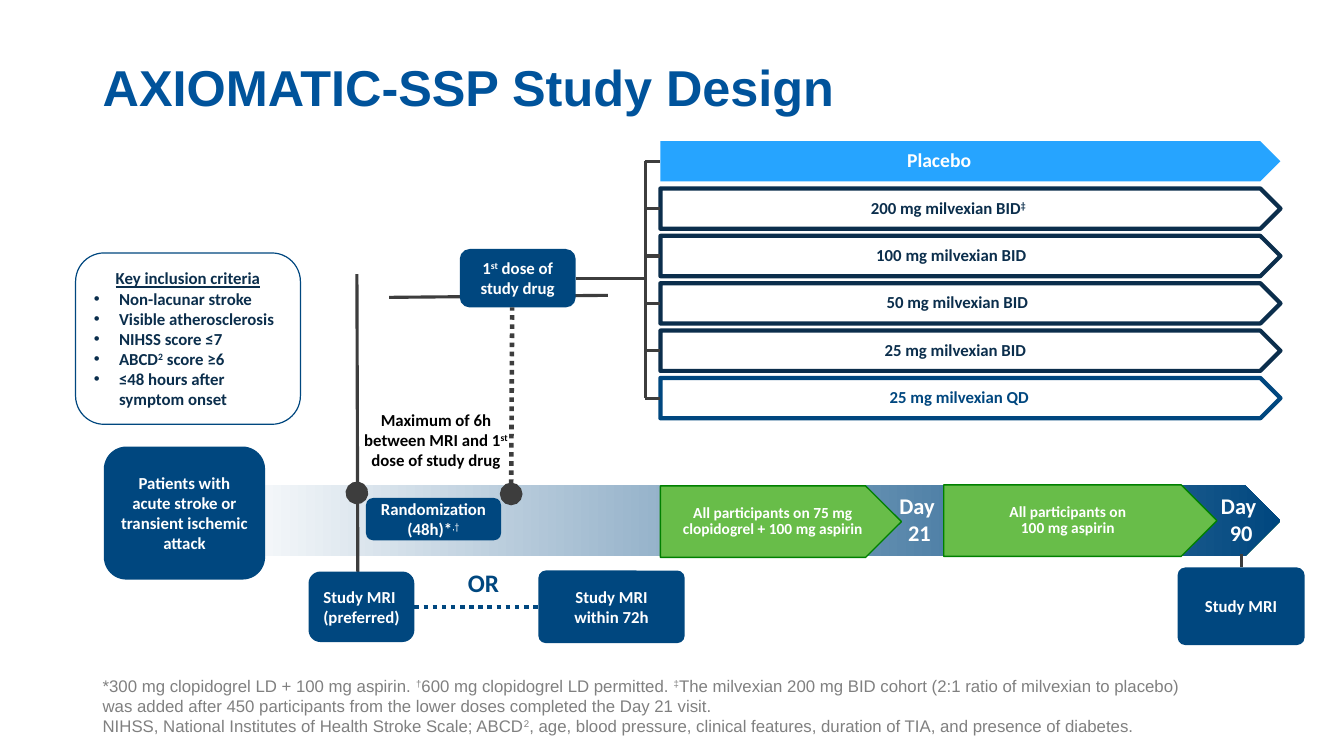
from dataclasses import dataclass

from lxml import etree
from pptx import Presentation
from pptx.dml.color import RGBColor
from pptx.enum.dml import MSO_LINE
from pptx.enum.shapes import MSO_CONNECTOR, MSO_SHAPE
from pptx.enum.text import MSO_ANCHOR, PP_ALIGN
from pptx.oxml.ns import qn
from pptx.shapes.autoshape import Shape
from pptx.shapes.connector import Connector
from pptx.util import Pt

SCALE = 9144  # EMU in one px, 100 px to the inch
ARROW, ROUNDED = MSO_SHAPE.PENTAGON, MSO_SHAPE.ROUNDED_RECTANGLE
STRAIGHT, DOTTED = MSO_CONNECTOR.STRAIGHT, MSO_LINE.ROUND_DOT
LEFT, CENTER = PP_ALIGN.LEFT, PP_ALIGN.CENTER
TOP, MIDDLE, BOTTOM = MSO_ANCHOR.TOP, MSO_ANCHOR.MIDDLE, MSO_ANCHOR.BOTTOM
SITE_TOP, SITE_LEFT, SITE_RIGHT = 0, 1, 3

WHITE = RGBColor(0xFF, 0xFF, 0xFF)
BLACK = RGBColor(0x00, 0x00, 0x00)
GRAY = RGBColor(0x80, 0x80, 0x80)
CHARCOAL = RGBColor(0x3D, 0x3D, 0x3D)
NAVY = RGBColor(0x0B, 0x2E, 0x4C)
BLUE = RGBColor(0x00, 0x47, 0x7F)
TITLE_BLUE = RGBColor(0x00, 0x53, 0x9B)
SKY = RGBColor(0x26, 0xA4, 0xFF)
GREEN = RGBColor(0x68, 0xBD, 0x49)
DARK_GREEN = RGBColor(0x00, 0x80, 0x00)


@dataclass(frozen=True)
class Area:
    left: int
    top: int
    width: int
    height: int

    def emu(self) -> list[int]:
        return [v * SCALE for v in (self.left, self.top, self.width, self.height)]


@dataclass(frozen=True)
class Arm:
    label: str
    text_center: int
    color: RGBColor = NAVY
    fill: RGBColor | None = None
    size: int = 12


@dataclass(frozen=True)
class Step:
    label: str
    area: Area
    inset: int
    corner: float = 0.17


@dataclass(frozen=True)
class Background:
    label: str
    area: Area
    insets: tuple[int, int]


@dataclass(frozen=True)
class Caption:
    text: str
    area: Area
    size: int
    color: RGBColor
    font: str = "Calibri"
    bold: bool = True
    align: PP_ALIGN = CENTER
    anchor: MSO_ANCHOR = TOP
    inset: int = 10
    spacing: float = 1.0


ARMS = [
    Arm("Placebo", 931, WHITE, SKY, 14),
    Arm("200 mg milvexian BID^‡", 940),
    Arm("100 mg milvexian BID", 943),
    Arm("50 mg milvexian BID", 949),
    Arm("25 mg milvexian BID", 947),
    Arm("25 mg milvexian QD", 951, BLUE),
]
ARM_LEFT, ARM_TOP, ARM_WIDTH, ARM_HEIGHT, ARM_PITCH = 655, 140, 615, 40, 47
BRACKET_X = 640

PATIENTS = Step("Patients with acute stroke or transient ischemic attack", Area(103, 443, 160, 132), 10)
RANDOMIZATION = Step("Randomization (48h)*^,†", Area(363, 494, 134, 42), 10)
FIRST_DOSE = Step("1^st^ dose of study drug", Area(456, 247, 115, 58), 14)
MRI_PREFERRED = Step("Study MRI \n(preferred)", Area(306, 567, 105, 70), 5)
MRI_72H = Step("Study MRI within 72h", Area(534, 566, 145, 72), 20, 0.1)
MRI_FINAL = Step("Study MRI", Area(1168, 563, 126, 77), 14, 0.1)

BACKGROUNDS = [
    Background("All participants on 75 mg clopidogrel + 100 mg aspirin", Area(655, 482, 239, 71), (10, 8)),
    Background("All participants on 100 mg aspirin", Area(936, 481, 271, 71), (60, 67)),
]
CRITERIA = ("Key inclusion criteria\nNon-lacunar stroke\nVisible atherosclerosis\nNIHSS score ≤7\n"
            "ABCD^2^ score ≥6\n≤48 hours after symptom onset")
FOOTNOTE = ("*300 mg clopidogrel LD + 100 mg aspirin. ^†^600 mg clopidogrel LD permitted. ^‡^The milvexian "
            "200 mg BID cohort (2:1 ratio of milvexian to placebo) was added after 450 participants from the "
            "lower doses completed the Day 21 visit.\nNIHSS, National Institutes of Health Stroke Scale; "
            "ABCD^2^, age, blood pressure, clinical features, duration of TIA, and presence of diabetes.")
CAPTIONS = [
    Caption("Day \n21", Area(865, 483, 94, 64), 16, WHITE),
    Caption("Day \n90", Area(1184, 483, 94, 64), 16, WHITE),
    Caption("OR", Area(441, 558, 77, 40), 18, BLUE),
    Caption("Maximum of 6h between MRI and 1^st^ dose of study drug", Area(336, 409, 193, 55), 12, BLACK,
            anchor=MIDDLE, inset=15),
    Caption("AXIOMATIC-SSP Study Design", Area(92, 0, 1150, 121), 36, TITLE_BLUE, "Arial",
            align=LEFT, anchor=BOTTOM, spacing=0.9),
    Caption(FOOTNOTE, Area(92, 667, 1116, 68), 12, GRAY, "Arial", False, LEFT, BOTTOM),
]


def write(box: Shape, text: str, *, size: int, color: RGBColor, font: str = "Calibri", bold: bool = True,
          align: PP_ALIGN = CENTER, anchor: MSO_ANCHOR = MIDDLE, insets: tuple[int, int] = (10, 10),
          margin: int = 0, spacing: float = 1.0) -> None:
    """Fill a box; a line break starts a paragraph and ^ toggles superscript."""
    frame = box.text_frame
    frame.word_wrap = True
    frame.vertical_anchor = anchor
    frame.margin_left, frame.margin_right = (v * SCALE for v in insets)
    frame.margin_top = frame.margin_bottom = margin * SCALE
    for row, line in enumerate(text.split("\n")):
        para = frame.add_paragraph() if row else frame.paragraphs[0]
        para.alignment = align
        para.line_spacing = spacing
        for part, words in enumerate(line.split("^")):
            if not words:
                continue
            span = para.add_run()
            span.text = words
            span.font.size, span.font.name, span.font.bold = Pt(size), font, bold
            span.font.color.rgb = color
            if part % 2:
                span.font._element.set("baseline", "30000")


def add_box(page, kind: MSO_SHAPE, area: Area, *, fill: RGBColor | None = None,
            outline: RGBColor | None = None, weight: float = 1) -> Shape:
    box = page.shapes.add_shape(kind, *area.emu())
    box.shadow.inherit = False
    if fill is None:
        box.fill.background()
    else:
        box.fill.solid()
        box.fill.fore_color.rgb = fill
    if outline is None:
        box.line.fill.background()
    else:
        box.line.color.rgb = outline
        box.line.width = Pt(weight)
    return box


def add_step(page, step: Step) -> Shape:
    box = add_box(page, ROUNDED, step.area, fill=BLUE)
    box.adjustments[0] = step.corner
    write(box, step.label, size=12, color=WHITE, insets=(step.inset, step.inset))
    return box


def add_line(page, start: tuple[int, int], end: tuple[int, int], *, color: RGBColor = CHARCOAL,
             dotted: bool = False, oval: bool = False) -> Connector:
    line = page.shapes.add_connector(STRAIGHT, *(v * SCALE for v in start + end))
    line.line.color.rgb = color
    line.line.width = Pt(3.25 if dotted else 2.25)
    if dotted:
        line.line.dash_style = DOTTED
    properties = line._element.spPr
    if oval:
        etree.SubElement(properties.find(qn("a:ln")), qn("a:headEnd"), type="oval", w="lg", len="lg")
    etree.SubElement(properties, qn("a:effectLst"))
    return line


def add_criteria(page) -> None:
    box = add_box(page, ROUNDED, Area(75, 251, 223, 170), outline=BLUE, weight=0.85)
    write(box, CRITERIA, size=12, color=NAVY, align=LEFT)
    heading, *items = box.text_frame.paragraphs
    heading.alignment = CENTER
    heading.runs[0].font.underline = True
    for para in items:
        properties = para._p.get_or_add_pPr()
        properties.set("marL", str(25 * SCALE))
        properties.set("indent", str(-25 * SCALE))
        etree.SubElement(properties, qn("a:buFont"), typeface="Arial")
        etree.SubElement(properties, qn("a:buChar"), char="•")


def add_arms(page, first_dose: Shape) -> None:
    middles = [ARM_TOP + ARM_HEIGHT // 2 + row * ARM_PITCH for row in range(len(ARMS))]
    add_line(page, (BRACKET_X, middles[0]), (BRACKET_X, middles[-1]))
    trunk_y = FIRST_DOSE.area.top + FIRST_DOSE.area.height // 2
    add_line(page, (571, trunk_y), (BRACKET_X, trunk_y)).begin_connect(first_dose, SITE_RIGHT)
    natural_center = ARM_LEFT + (ARM_WIDTH - ARM_HEIGHT // 4) // 2
    for arm, middle in zip(ARMS, middles):
        area = Area(ARM_LEFT, middle - ARM_HEIGHT // 2, ARM_WIDTH, ARM_HEIGHT)
        box = add_box(page, ARROW, area, fill=arm.fill, outline=None if arm.fill else arm.color, weight=3)
        write(box, arm.label, size=arm.size, color=arm.color, spacing=0.9,
              insets=(0, 2 * (natural_center - arm.text_center)))
        add_line(page, (BRACKET_X, middle), (ARM_LEFT, middle)).end_connect(box, SITE_LEFT)


def main() -> None:
    deck = Presentation()
    deck.slide_width, deck.slide_height = 1333 * SCALE, 750 * SCALE
    page = deck.slides.add_slide(deck.slide_layouts[6])

    band = add_box(page, ARROW, Area(213, 481, 1057, 71))
    band.fill.gradient()
    band.fill.gradient_angle = 0
    for stop, color in zip(band.fill.gradient_stops, (WHITE, BLUE)):
        stop.color.rgb = color

    add_line(page, (386, 295), (603, 293))
    add_line(page, (354, 272), (355, 603))
    add_step(page, PATIENTS)
    randomization = add_step(page, RANDOMIZATION)
    randomization.text_frame.paragraphs[0].runs[-1].font.bold = False
    first_dose, preferred, within_72h, final = (
        add_step(page, step) for step in (FIRST_DOSE, MRI_PREFERRED, MRI_72H, MRI_FINAL))
    choice = add_line(page, (411, 602), (534, 602), color=BLUE, dotted=True)
    choice.begin_connect(preferred, SITE_RIGHT)
    choice.end_connect(within_72h, SITE_LEFT)
    add_line(page, (1231, 550), (1231, 563)).end_connect(final, SITE_TOP)

    add_arms(page, first_dose)
    for item in BACKGROUNDS:
        box = add_box(page, ARROW, item.area, fill=GREEN, outline=DARK_GREEN)
        write(box, item.label, size=11, color=WHITE, insets=item.insets, spacing=0.9)
    add_line(page, (507, 490), (508, 305), dotted=True, oval=True)
    add_line(page, (354, 489), (353, 496), dotted=True, oval=True)
    add_criteria(page)
    for item in CAPTIONS:
        box = page.shapes.add_textbox(*item.area.emu())
        write(box, item.text, size=item.size, color=item.color, font=item.font, bold=item.bold,
              align=item.align, anchor=item.anchor, insets=(item.inset, item.inset), margin=5,
              spacing=item.spacing)
    deck.save("out.pptx")


if __name__ == "__main__":
    main()
